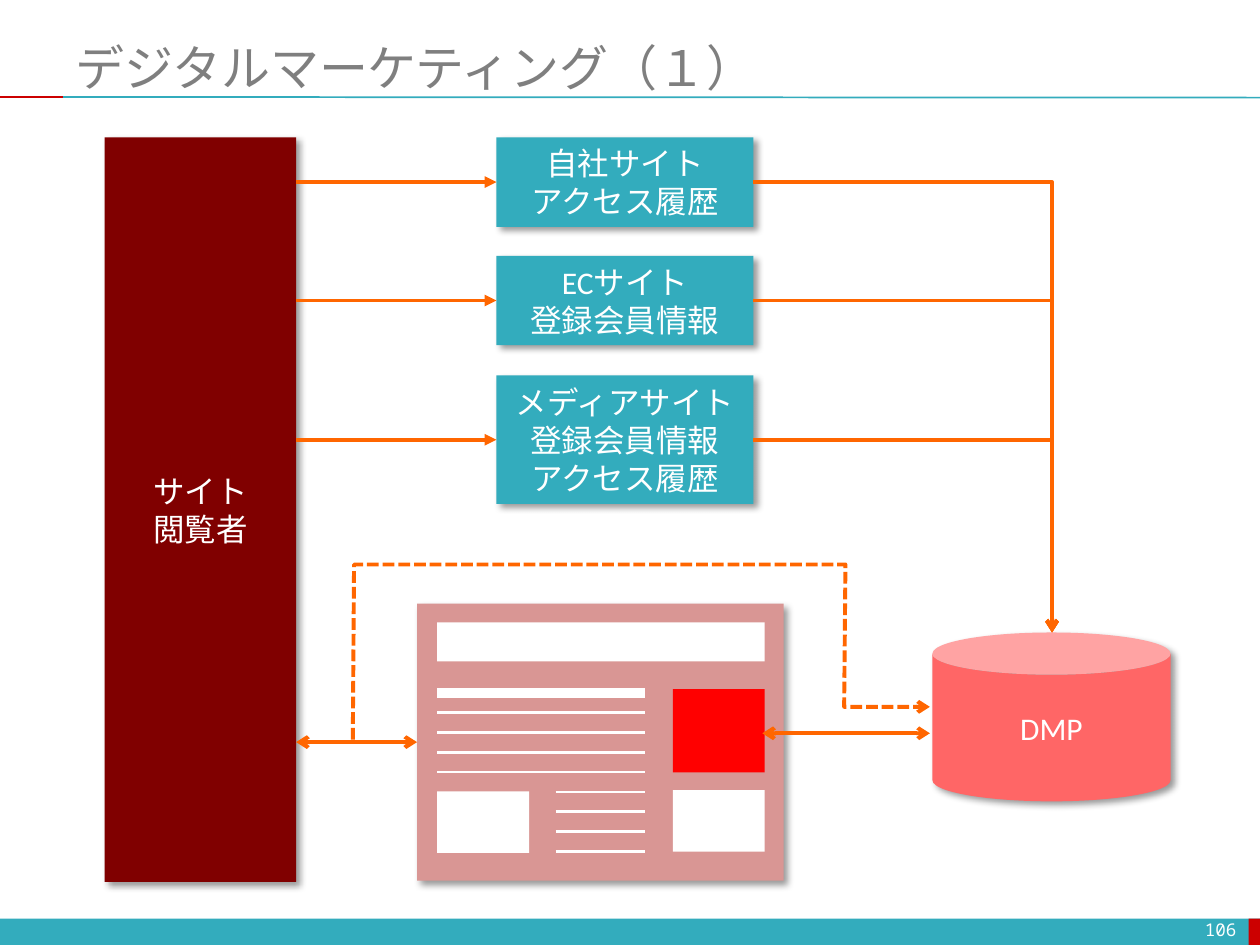
"""Digital marketing slide: site visitors, data sources, a web page and the DMP."""
from lxml import etree
from pptx import Presentation, util as u
from pptx.dml.color import RGBColor
from pptx.enum import dml, shapes, text
from pptx.oxml.ns import qn

C = dict(teal="33ACBD", red="CC0000", maroon="800000", orange="FF6600", coral="FF6666",
         pink="D99694", ad="FF0000", white="FFFFFF", grey="7F7F7F", black="000000")
CENTER, RIGHT, LEFT = text.PP_ALIGN.CENTER, text.PP_ALIGN.RIGHT, text.PP_ALIGN.LEFT
RECT, CAN = shapes.MSO_SHAPE.RECTANGLE, shapes.MSO_SHAPE.CAN

prs = Presentation()
prs.slide_width, prs.slide_height = u.Inches(10), u.Inches(7.5)
cell = prs.slide_width / 100
s = prs.slides.add_slide(prs.slide_layouts[6])


def box(kind, at, fill=None, lines=(), shadow=False, align=CENTER, size=18, color="white", name="Calibri"):
    at = [round(v * cell) for v in at]
    sp = s.shapes.add_shape(kind, *at) if kind else s.shapes.add_textbox(*at)
    if kind:
        sp.shadow.inherit = False
        sp.fill.solid()
        sp.fill.fore_color.rgb = RGBColor.from_string(C[fill])
        sp.line.fill.background()
    if shadow:
        fx = etree.SubElement(sp._element.spPr.find(qn("a:effectLst")), qn("a:outerShdw"),
                              blurRad="50800", dist="38100", dir="2700000", algn="tl", rotWithShape="0")
        clr = etree.SubElement(fx, qn("a:srgbClr"), val=C["black"])
        etree.SubElement(clr, qn("a:alpha"), val="40000")
    tf = sp.text_frame
    tf.word_wrap, tf.vertical_anchor = True, text.MSO_ANCHOR.MIDDLE
    for i, line in enumerate(lines):
        p = tf.add_paragraph() if i else tf.paragraphs[0]
        p.alignment = align
        r = p.add_run()
        r.text = line
        for key, value in dict(size=u.Pt(size), name=name).items():
            setattr(r.font, key, value)
        r.font.color.rgb = RGBColor.from_string(C[color])


def line(points, color="orange", width=2.25, head=None, tail=None, bent=False, dash=None):
    pts = [(round(x * cell), round(y * cell)) for x, y in points]
    if len(pts) > 2:
        fb = s.shapes.build_freeform(*pts[0], scale=1.0)
        fb.add_line_segments(pts[1:], close=False)
        ln = fb.convert_to_shape()
        ln.fill.background()
        ln.shadow.inherit = False
    else:
        kind = shapes.MSO_CONNECTOR.ELBOW if bent else shapes.MSO_CONNECTOR.STRAIGHT
        ln = s.shapes.add_connector(kind, *pts[0], *pts[1])
        if bent:
            ln._element.spPr.find(qn("a:prstGeom")).set("prst", "bentConnector2")
    ln.line.color.rgb = RGBColor.from_string(C[color])
    ln.line.width = u.Pt(width)
    if dash:
        ln.line.dash_style = dash
    for tag, end in (("a:headEnd", head), ("a:tailEnd", tail)):
        if end:
            etree.SubElement(ln.line._get_or_add_ln(), qn(tag), type=end)
    if len(pts) == 2:
        etree.SubElement(ln._element.spPr, qn("a:effectLst"))


box(RECT, (0, 72.9, 100, 2.15), "teal")
box(RECT, (99.1, 72.9, 0.95, 2.15), "red")
line([(5, 7.7), (100, 7.75)], "teal", 1)
line([(0, 7.7), (5, 7.7)], "red", 1)
box(None, (5, 3, 95, 4.6), lines=["デジタルマーケティング（１）"], align=LEFT, size=28, color="grey")
box(None, (75.8, 72.6, 23.3, 2.4), lines=["106"], align=RIGHT, size=10, name="Noto Sans Mono")

box(RECT, (8.3, 10.9, 15.2, 59.1), "maroon", ["サイト", "閲覧者"], True)
box(CAN, (74, 50.2, 18.9, 13.4), "coral", ["DMP"], True)

sources = [(10.9, 7.1, ["自社サイト", "アクセス履歴"]),
           (20.3, 7.1, ["ECサイト", "登録会員情報"]),
           (29.8, 10.2, ["メディアサイト", "登録会員情報", "アクセス履歴"])]
for top, height, lines in sources:
    middle = top + height / 2
    box(RECT, (39.4, top, 20.4, height), "teal", lines, True)
    line([(23.5, middle), (39.4, middle)], tail="triangle")
    line([(59.8, middle), (83.5, 50.2)], tail="arrow", bent=True)

box(RECT, (33.1, 47.9, 29.1, 22), "pink", shadow=True)
for at, fill in [((34.7, 49.4, 26, 3.1), "white"), ((53.4, 54.7, 7.3, 6.6), "ad"),
                 ((53.4, 62.7, 7.3, 4.9), "white"), ((34.7, 62.8, 7.3, 4.9), "white")]:
    box(RECT, at, fill)
for i in range(9):
    y = 55 + i * 1.57
    line([(34.7 if i < 5 else 44.1, y), (51.2, y)], "white", 1.5 if i else 6)

line([(23.5, 58.9), (33.1, 58.9)], head="arrow", tail="arrow")
line([(28, 58.7), (28.1, 44.8), (67.1, 44.8), (67, 56.1), (73.8, 56.1)],
     tail="arrow", dash=dml.MSO_LINE.SQUARE_DOT)
line([(73.8, 58.2), (60.5, 58.2)], head="arrow", tail="arrow")

prs.save("out.pptx")
